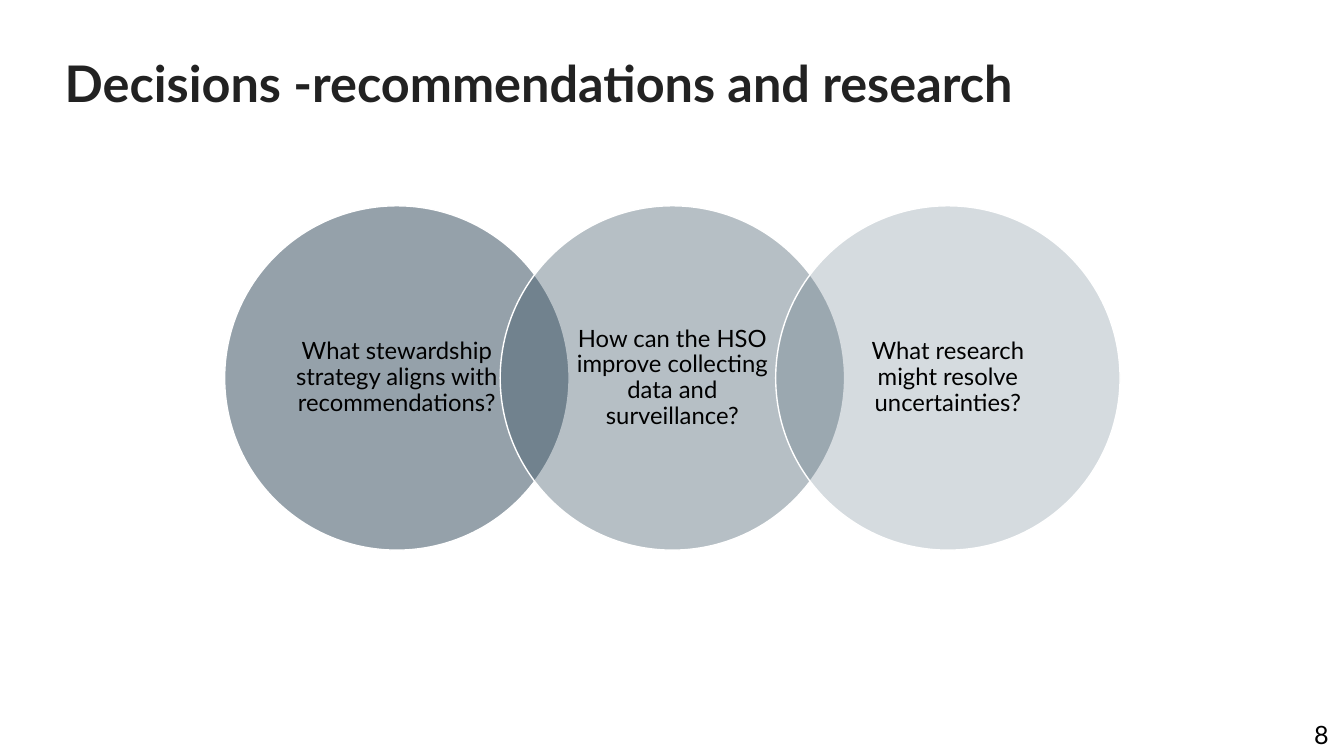
from dataclasses import dataclass

from lxml.etree import SubElement
from pptx import Presentation
from pptx.dml.color import RGBColor
from pptx.enum.shapes import MSO_SHAPE
from pptx.enum.text import MSO_ANCHOR, MSO_AUTO_SIZE, PP_ALIGN
from pptx.oxml.ns import qn
from pptx.util import Pt


@dataclass(frozen=True)
class Theme:
    font: str = "Lato"
    heading: str = "222222"
    ink: str = "000000"
    outline: str = "FFFFFF"
    circle_fills: tuple = (("2C4556", 50), ("2E495B", 35), ("314D60", 20))
    heading_size: int = 36
    question_size: int = 17
    page_size: int = 18


def write(frame, text, *, font, size, color, bold=False, align=PP_ALIGN.LEFT,
          anchor=MSO_ANCHOR.TOP, spacing=1.0, after=0, insets=(7.2, 3.6)):
    frame.word_wrap = True
    frame.auto_size = MSO_AUTO_SIZE.NONE
    frame.vertical_anchor = anchor
    frame.margin_left = frame.margin_right = Pt(insets[0])
    frame.margin_top = frame.margin_bottom = Pt(insets[1])
    paragraph = frame.paragraphs[0]
    paragraph.alignment = align
    paragraph.line_spacing = spacing
    paragraph.space_before = Pt(0)
    paragraph.space_after = Pt(after)
    run = paragraph.add_run()
    run.text = text
    run.font.name = font
    run.font.size = Pt(size)
    run.font.bold = bold
    run.font.color.rgb = RGBColor.from_string(color)


class SlideBuilder:
    def __init__(self, slide, theme):
        self.slide = slide
        self.theme = theme

    def title(self, text, left, top, width, height):
        heading = self.slide.shapes.title
        heading.left, heading.top = Pt(left), Pt(top)
        heading.width, heading.height = Pt(width), Pt(height)
        write(heading.text_frame, text, font=self.theme.font,
              size=self.theme.heading_size, color=self.theme.heading,
              bold=True, spacing=0.9)

    def circle(self, text, left, top, diameter, color, opacity):
        circle = self.slide.shapes.add_shape(
            MSO_SHAPE.OVAL, Pt(left), Pt(top), Pt(diameter), Pt(diameter))
        circle.shadow.inherit = False
        circle.fill.solid()
        circle.fill.fore_color.rgb = RGBColor.from_string(color)
        tint = circle.fill._xPr.find(qn("a:solidFill"))[0]
        SubElement(tint, qn("a:alpha"), val=str(opacity * 1000))
        circle.line.color.rgb = RGBColor.from_string(self.theme.outline)
        circle.line.width = Pt(1)
        write(circle.text_frame, text, font=self.theme.font,
              size=self.theme.question_size, color=self.theme.ink,
              align=PP_ALIGN.CENTER, anchor=MSO_ANCHOR.MIDDLE,
              spacing=0.9, after=6, insets=(13.5, 1.4))

    def page_number(self, text, left, top, width, height):
        page = self.slide.shapes.add_textbox(
            Pt(left), Pt(top), Pt(width), Pt(height))
        write(page.text_frame, text, font=self.theme.font,
              size=self.theme.page_size, color=self.theme.ink,
              align=PP_ALIGN.RIGHT)


def main():
    deck = Presentation()
    deck.slide_width, deck.slide_height = Pt(960), Pt(540)
    theme = Theme()
    builder = SlideBuilder(deck.slides.add_slide(deck.slide_layouts[5]), theme)
    builder.page_number("8", 823.7, 510.5, 132.5, 29)
    builder.title("Decisions -recommendations and research", 39, 38.5, 888, 101)

    questions = (
        "What stewardship strategy aligns with recommendations?",
        "How can the HSO improve collecting data and surveillance?",
        "What research might resolve uncertainties?",
    )
    first_left, top, diameter = 160.5, 147, 246
    step = diameter * 0.8
    for index, (question, (color, opacity)) in enumerate(
            zip(questions, theme.circle_fills)):
        builder.circle(question, first_left + index * step, top, diameter,
                       color, opacity)

    deck.save("out.pptx")


if __name__ == "__main__":
    main()
